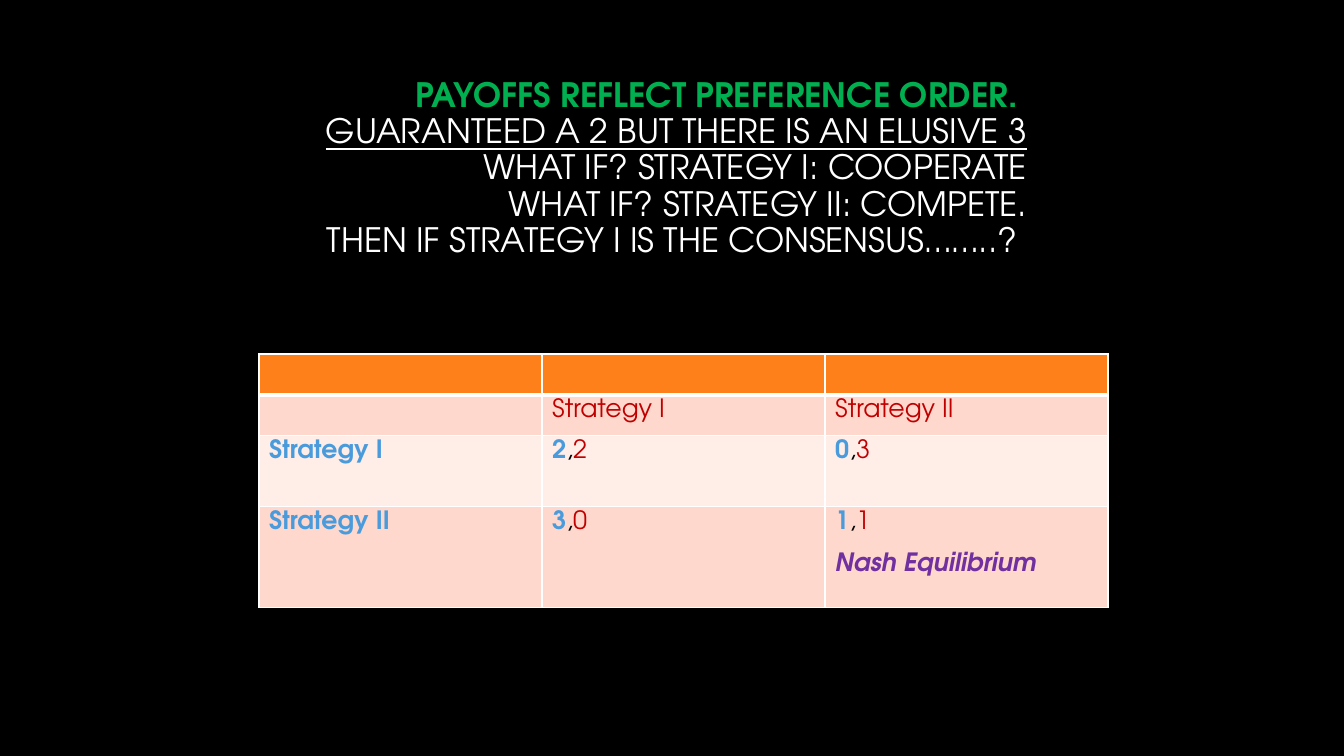
from dataclasses import dataclass

from lxml import etree
from pptx import Presentation
from pptx.dml.color import RGBColor
from pptx.enum.text import MSO_ANCHOR, MSO_AUTO_SIZE, PP_ALIGN
from pptx.oxml.ns import qn
from pptx.util import Pt

RIGHT = PP_ALIGN.RIGHT
MIDDLE = MSO_ANCHOR.MIDDLE
NO_AUTOFIT = MSO_AUTO_SIZE.NONE

SLIDE_W, SLIDE_H = 1344, 756
EMU_PER_PX = 12192000 / SLIDE_W
FONT = "TeX Gyre Adventor"
BLACK, WHITE, GREEN = "000000", "FFFFFF", "00B050"
RED, BLUE, PURPLE = "C00000", "4A9BDC", "7030A0"
ORANGE, PINK, PALE_PINK = "FE801A", "FFD8CD", "FFEDE8"


@dataclass(frozen=True)
class Run:
    text: str
    color: str
    bold: bool = False
    italic: bool = False
    underline: bool = False


@dataclass(frozen=True)
class Row:
    height: int
    fill: str
    cells: tuple
    bottom_border: int = 1


def px(n: int) -> int:
    return round(n * EMU_PER_PX)


def rgb(color: str) -> RGBColor:
    return RGBColor.from_string(color)


def payoff(row_player: str, column_player: str) -> list[Run]:
    return [Run(row_player, BLUE, bold=True), Run(",", BLACK), Run(column_player, RED)]


TITLE_LINES = [
    Run("PAYOFFS REFLECT PREFERENCE ORDER. ", GREEN, bold=True),
    Run("GUARANTEED A 2 BUT THERE IS AN ELUSIVE 3", WHITE, underline=True),
    Run("WHAT IF? STRATEGY I: COOPERATE", WHITE),
    Run("WHAT IF? STRATEGY II: COMPETE.", WHITE),
    Run("THEN IF STRATEGY I IS THE CONSENSUS……..? ", WHITE),
]

ROWS = [
    Row(40, ORANGE, ([], [], []), bottom_border=3),
    Row(41, PINK, ([], [[Run("Strategy I", RED)]], [[Run("Strategy II", RED)]])),
    Row(71, PALE_PINK, ([[Run("Strategy I", BLUE, bold=True)]],
                        [payoff("2", "2")], [payoff("0", "3")])),
    Row(101, PINK, ([[Run("Strategy II", BLUE, bold=True)]],
                    [payoff("3", "0")],
                    [payoff("1", "1"),
                     [Run("Nash Equilibrium", PURPLE, bold=True, italic=True)]])),
]
COLUMN_W = 283


def add_run(p, run: Run) -> None:
    r = p.add_run()
    r.text = run.text
    r.font.color.rgb = rgb(run.color)
    r.font.bold = run.bold
    r.font.italic = run.italic
    r.font.underline = run.underline


def set_font(p, size: int) -> None:
    p.font.name = FONT
    p.font.size = Pt(size)


def add_title(s) -> None:
    sp = s.shapes.title
    sp.left, sp.top, sp.width, sp.height = px(244), px(17), px(793), px(346)
    tf = sp.text_frame
    tf.word_wrap = True
    tf.auto_size = NO_AUTOFIT
    tf.vertical_anchor = MIDDLE
    tf.margin_bottom = px(47)
    p = tf.paragraphs[0]
    p.alignment = RIGHT
    p.line_spacing = 0.9
    set_font(p, 24)
    for i, line in enumerate(TITLE_LINES):
        if i:
            p.add_line_break()
        add_run(p, line)


def set_border(cell, side: str, width: int) -> None:
    ln = etree.SubElement(cell._tc.get_or_add_tcPr(), qn(f"a:ln{side}"), w=str(Pt(width)))
    fill = etree.SubElement(ln, qn("a:solidFill"))
    etree.SubElement(fill, qn("a:srgbClr"), val=WHITE)


def fill_cell(cell, paragraphs: list[list[Run]]) -> None:
    tf = cell.text_frame
    for i, runs in enumerate(paragraphs):
        p = tf.add_paragraph() if i else tf.paragraphs[0]
        p.line_spacing = 0.93
        if i:
            p.space_before = Pt(14.5)
        set_font(p, 18)
        for run in runs:
            add_run(p, run)


def add_payoff_table(s) -> None:
    columns = len(ROWS[0].cells)
    height = sum(row.height for row in ROWS)
    frame = s.shapes.add_table(len(ROWS), columns, px(259), px(354),
                               px(COLUMN_W * columns), px(height))
    table = frame.table
    for column in table.columns:
        column.width = px(COLUMN_W)
    for i, row in enumerate(ROWS):
        table.rows[i].height = px(row.height)
        for j, paragraphs in enumerate(row.cells):
            cell = table.cell(i, j)
            for side in "LRT":
                set_border(cell, side, 1)
            set_border(cell, "B", row.bottom_border)
            cell.fill.solid()
            cell.fill.fore_color.rgb = rgb(row.fill)
            fill_cell(cell, paragraphs)


def main() -> None:
    prs = Presentation()
    prs.slide_width, prs.slide_height = px(SLIDE_W), px(SLIDE_H)
    s = prs.slides.add_slide(prs.slide_layouts[5])
    s.background.fill.solid()
    s.background.fill.fore_color.rgb = rgb(BLACK)
    add_title(s)
    add_payoff_table(s)
    prs.save("out.pptx")


if __name__ == "__main__":
    main()
